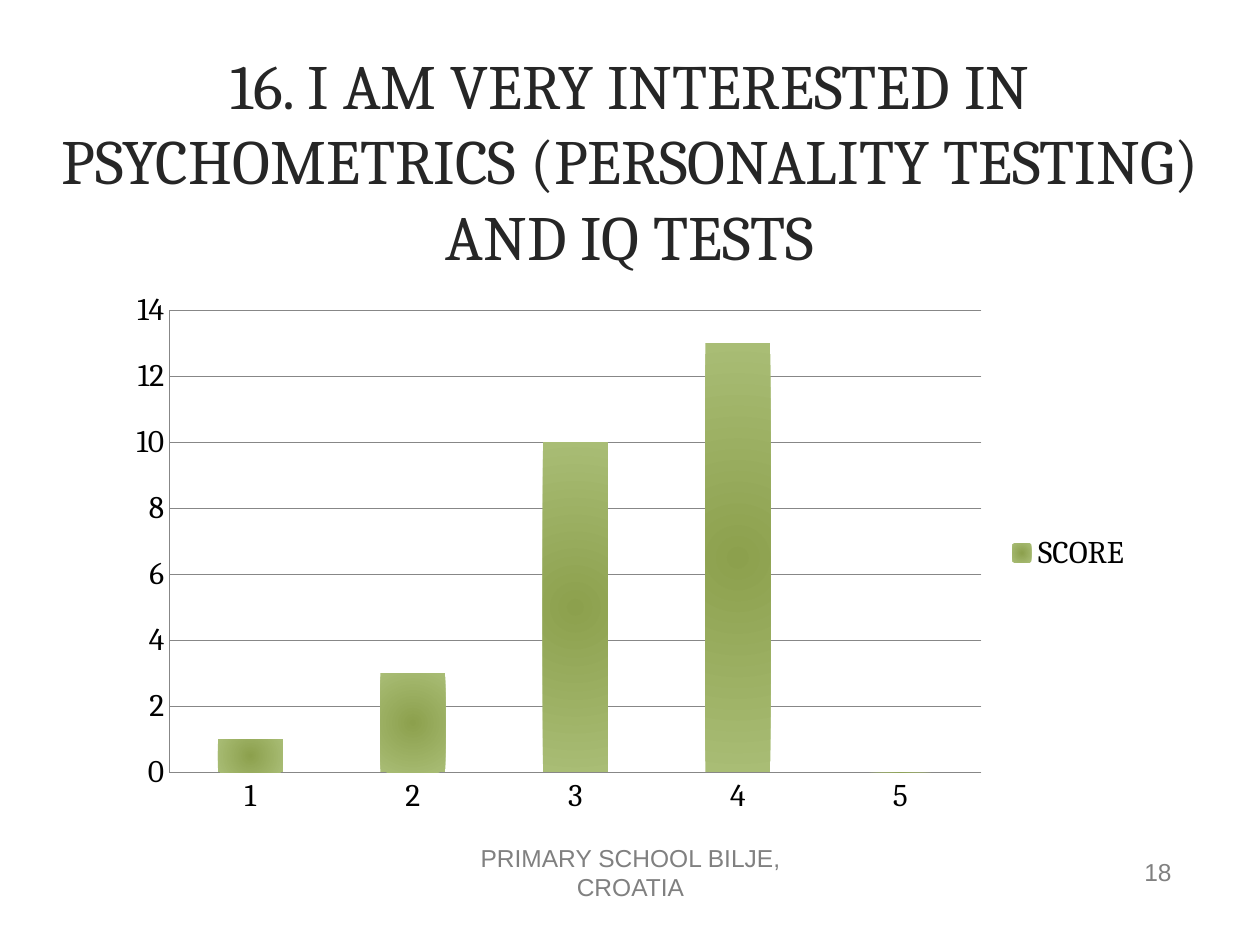
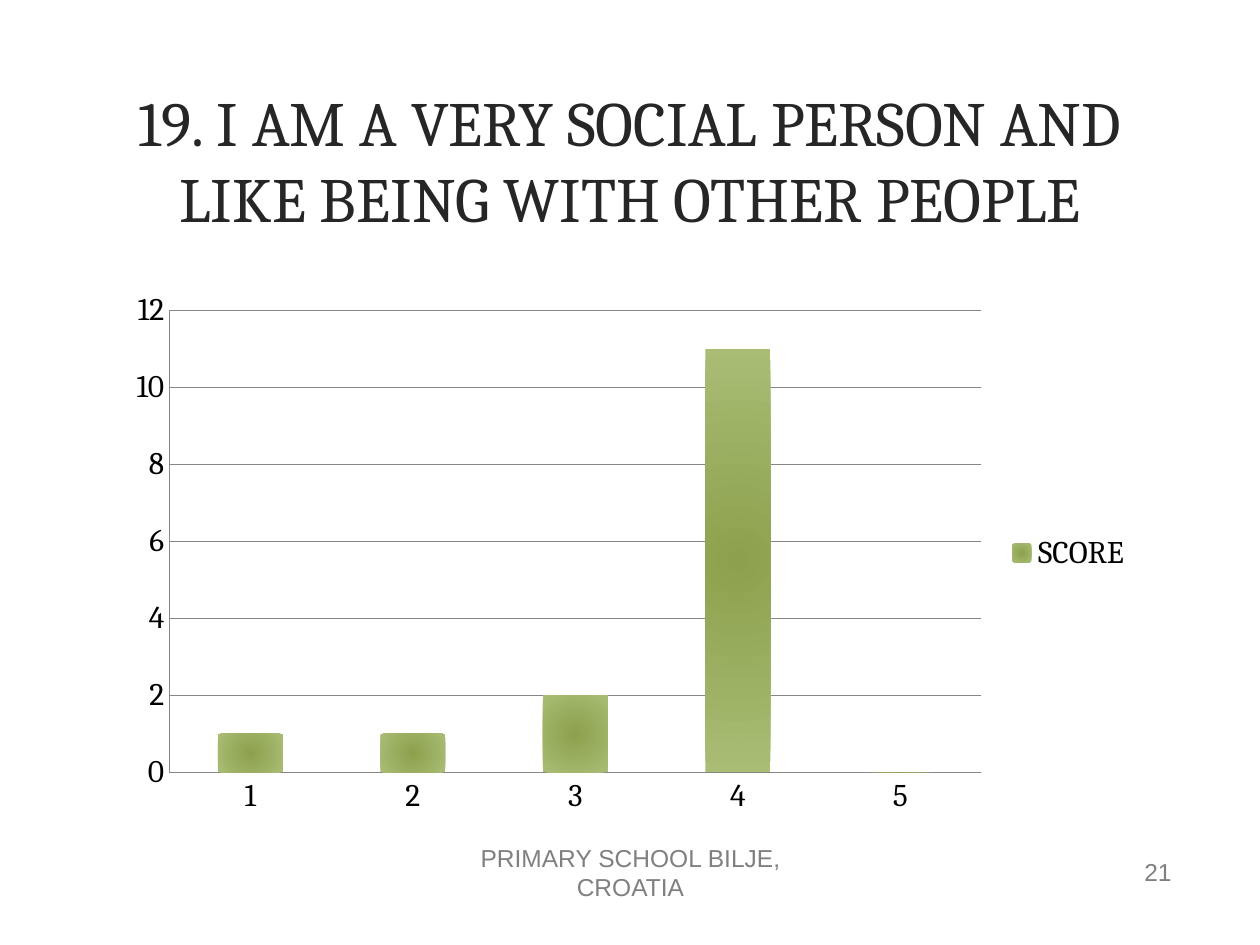
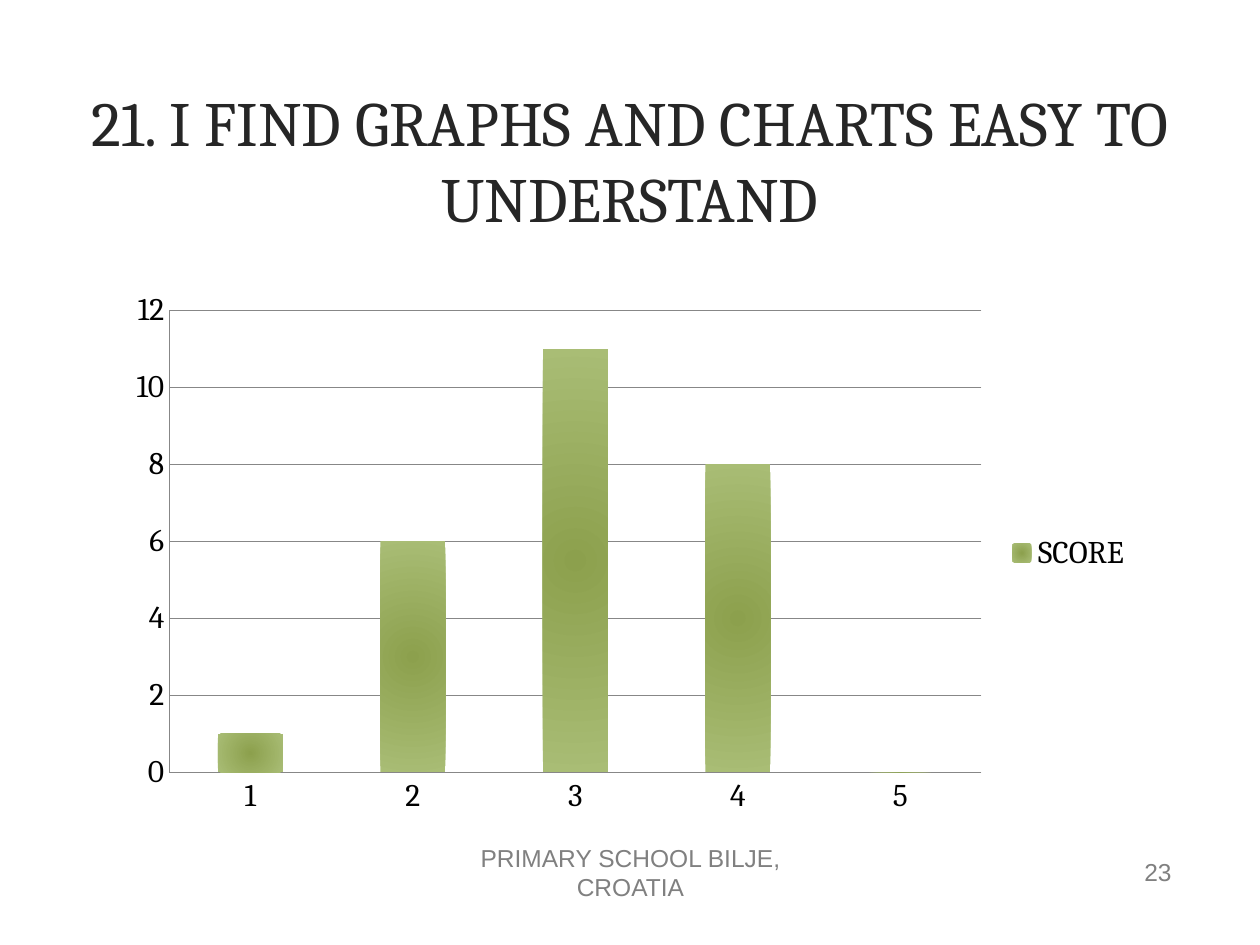
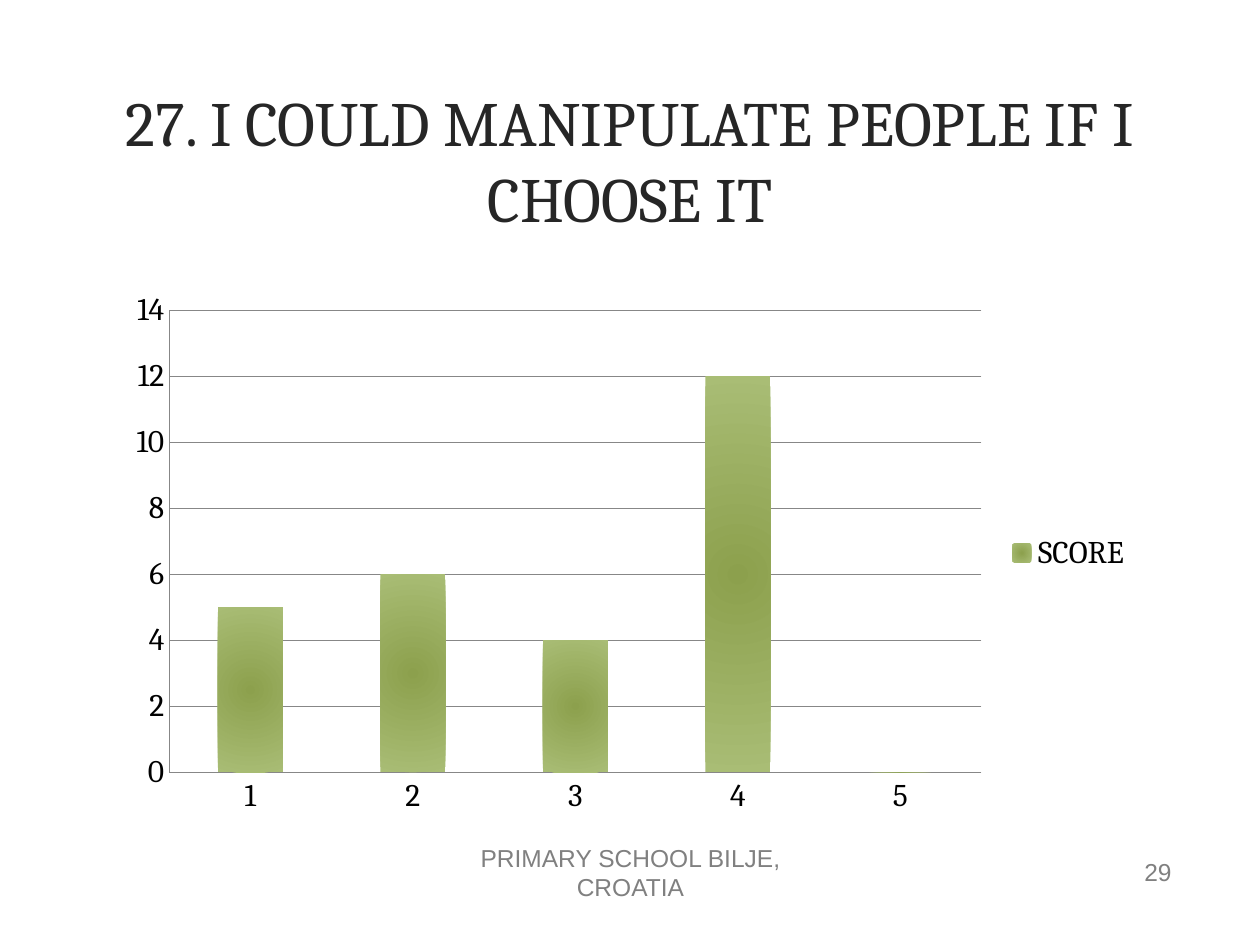
from typing import NamedTuple

from pptx import Presentation
from pptx import util as u
from pptx.chart.data import CategoryChartData
from pptx.dml.color import RGBColor
from pptx.enum import chart as ch, text
from pptx.oxml import parse_xml
from pptx.oxml.ns import nsdecls

# Shared look
PX = 914400 / 126
SERIF, SANS = "Cambria", "Arial"
INK, GREY, BLACK, RULE = "262626", "808080", "000000", "878787"
CORE, EDGE = "8CA04D", "A9BD75"
FOOTER = "PRIMARY SCHOOL BILJE, CROATIA"
SCORES = ("1", "2", "3", "4", "5")
GLOW = (
    f'<a:path {nsdecls("a")} path="circle">'
    '<a:fillToRect l="50000" t="50000" r="50000" b="50000"/></a:path>'
)


class Box(NamedTuple):
    left: int
    top: int
    width: int
    height: int

    def emu(self) -> list[int]:
        return [u.Emu(round(side * PX)) for side in self]


class Style(NamedTuple):
    font: str
    size: int
    color: str
    align: text.PP_ALIGN


class Survey(NamedTuple):
    title: str
    votes: tuple[int, ...]
    top: int
    page: int
    box: Box


HEAD = Style(SERIF, 36, INK, text.PP_ALIGN.CENTER)
FOOT = Style(SANS, 14, GREY, text.PP_ALIGN.CENTER)
PAGE = FOOT._replace(align=text.PP_ALIGN.RIGHT)

WIDE = Box(0, 60, 1260, 199)
NARROW = Box(76, 60, 1108, 199)
CHART = Box(116, 281, 1029, 544)
FOOT_BOX = Box(431, 847, 399, 50)
PAGE_BOX = Box(890, 847, 294, 50)

SURVEYS = (
    Survey("16. I AM VERY INTERESTED IN PSYCHOMETRICS (PERSONALITY TESTING) AND IQ TESTS",
           (1, 3, 10, 13, 0), 14, 18, WIDE),
    Survey("19. I AM A VERY SOCIAL PERSON AND LIKE BEING WITH OTHER PEOPLE",
           (1, 1, 2, 11, 0), 12, 21, NARROW),
    Survey("21. I FIND GRAPHS AND CHARTS EASY TO UNDERSTAND",
           (1, 6, 11, 8, 0), 12, 23, NARROW),
    Survey("27. I COULD MANIPULATE PEOPLE IF I CHOOSE IT",
           (5, 6, 4, 12, 0), 14, 29, NARROW),
)


def rgb(code: str) -> RGBColor:
    return RGBColor.from_string(code)


def write(shape, words: str, style: Style) -> None:
    frame = shape.text_frame
    frame.word_wrap = True
    frame.auto_size = text.MSO_AUTO_SIZE.NONE
    frame.vertical_anchor = text.MSO_ANCHOR.MIDDLE
    para = frame.paragraphs[0]
    para.alignment = style.align
    run = para.add_run()
    run.text = words
    run.font.name = style.font
    run.font.size = u.Pt(style.size)
    run.font.color.rgb = rgb(style.color)


def head(slide, survey: Survey) -> None:
    title = slide.shapes.title
    title.left, title.top, title.width, title.height = survey.box.emu()
    write(title, survey.title, HEAD)


def label(slide, box: Box, words: str, style: Style) -> None:
    write(slide.shapes.add_textbox(*box.emu()), words, style)


def glow(fill) -> None:
    """Fill with a gradient that spreads from the centre."""
    fill.gradient()
    for stop, color in zip(fill.gradient_stops, (CORE, EDGE)):
        stop.color.rgb = rgb(color)
    grad = fill._xPr.find(".//{*}gradFill")
    grad.replace(grad.find("{*}lin"), parse_xml(GLOW))


def graph(slide, survey: Survey) -> None:
    data = CategoryChartData()
    data.categories = SCORES
    data.add_series("SCORE", survey.votes)
    chart = slide.shapes.add_chart(
        ch.XL_CHART_TYPE.COLUMN_CLUSTERED, *CHART.emu(), data).chart
    chart.has_title = False
    chart.font.name = SERIF
    chart.font.size = u.Pt(18)
    chart.font.color.rgb = rgb(BLACK)
    chart.has_legend = True
    chart.legend.position = ch.XL_LEGEND_POSITION.RIGHT
    chart.legend.include_in_layout = False

    # Axes and grid
    scale = chart.value_axis
    scale.minimum_scale, scale.maximum_scale, scale.major_unit = 0, survey.top, 2
    scale.has_major_gridlines = True
    for axis in (chart.category_axis, scale):
        axis.major_tick_mark = axis.minor_tick_mark = ch.XL_TICK_MARK.NONE
    for part in (chart.category_axis, scale, scale.major_gridlines):
        part.format.line.color.rgb = rgb(RULE)
        part.format.line.width = u.Pt(0.75)

    # Columns
    plot = chart.plots[0]
    plot.gap_width = 150
    plot.vary_by_categories = False
    glow(plot.series[0].format.fill)


def main() -> None:
    deck = Presentation()
    deck.slide_width, deck.slide_height = u.Inches(10), u.Inches(7.5)
    for survey in SURVEYS:
        slide = deck.slides.add_slide(deck.slide_layouts[5])
        head(slide, survey)
        graph(slide, survey)
        label(slide, FOOT_BOX, FOOTER, FOOT)
        label(slide, PAGE_BOX, str(survey.page), PAGE)
    deck.save("out.pptx")


if __name__ == "__main__":
    main()
